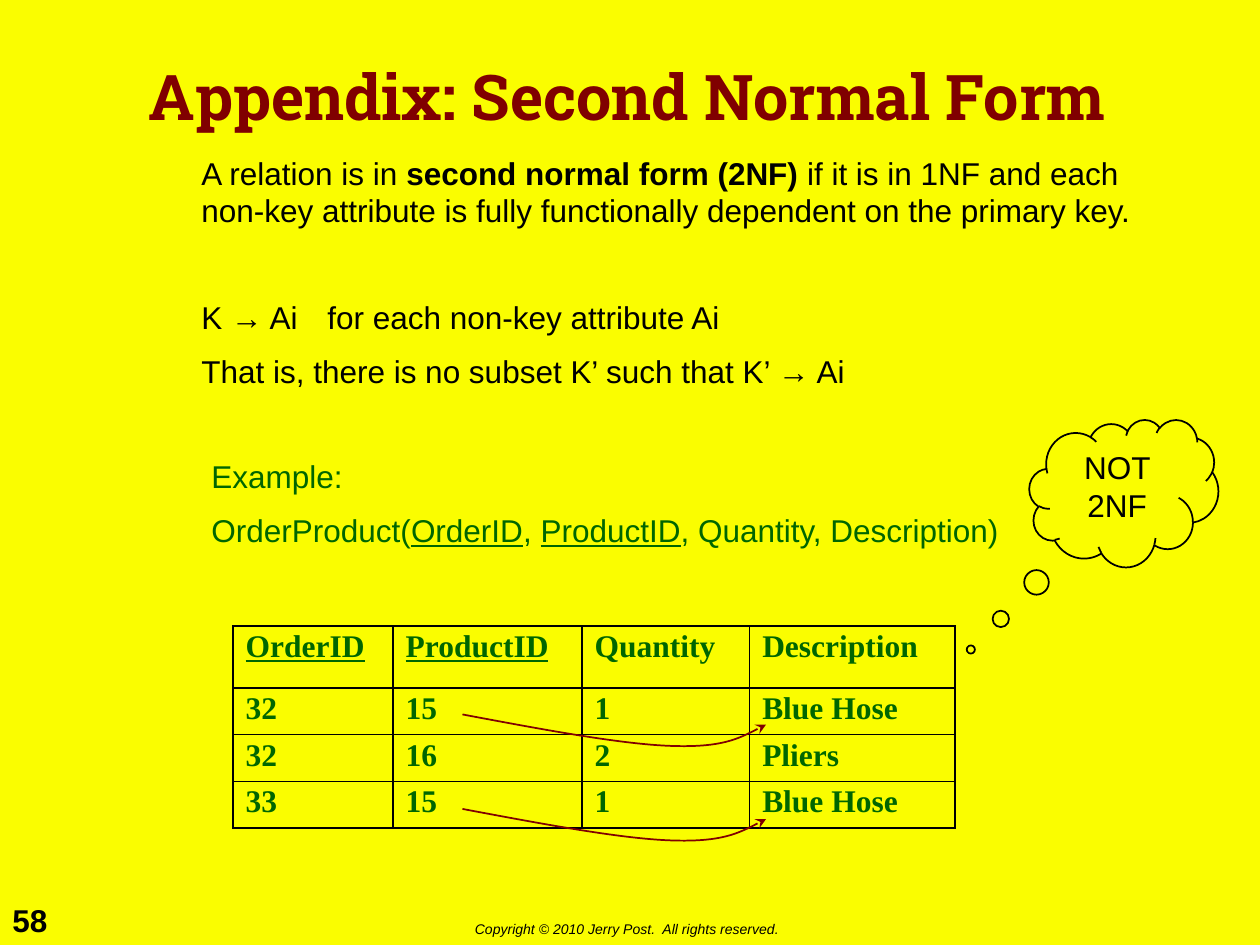
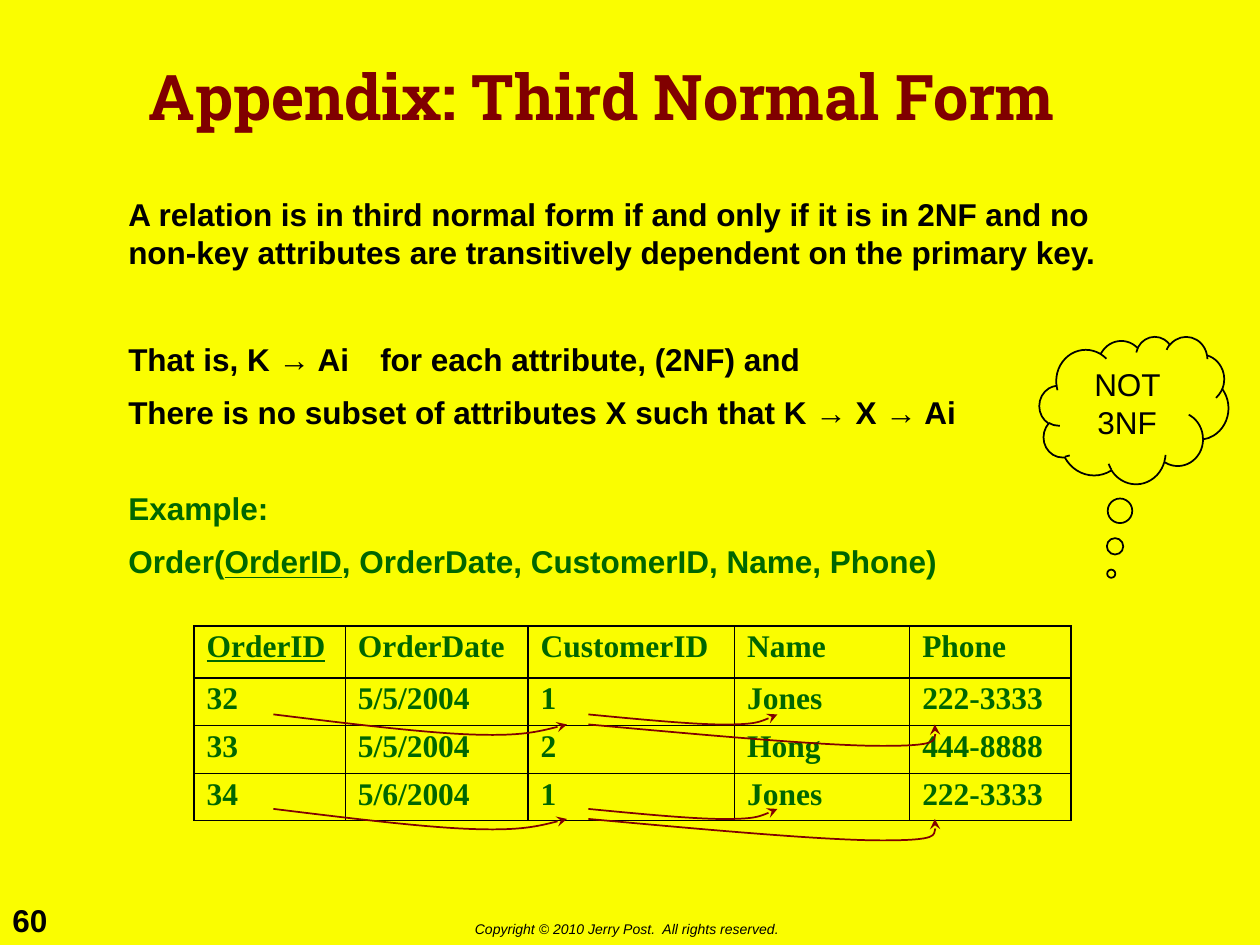
import dataclasses

import pptx
import pptx.dml.color
import pptx.enum.shapes
import pptx.enum.text
import pptx.oxml
import pptx.oxml.ns
import pptx.util

Inches = pptx.util.Inches
Pt = pptx.util.Pt


@dataclasses.dataclass(frozen=True)
class Theme:
    background: str = "FAFD00"
    ink: str = "000000"
    maroon: str = "800000"
    green: str = "006600"
    title_font: str = "Roboto Slab"
    body_font: str = "Arial"
    table_font: str = "Times New Roman"
    title_size: int = 36
    body_size: int = 18
    footer_size: int = 8
    paragraph_gap: float = 9
    section_gap: float = 39.5
    line_width: float = 1


THEME = Theme()
COPYRIGHT = "Copyright © 2010 Jerry Post.  All rights reserved."
ROW_PAIR_STEP = 0.75

SLIDES = [
    {
        "number": "58",
        "title": "Appendix: Second Normal Form",
        "bold": False,
        "definition_at": (1.5, 1.17, 7.92, 2.06),
        "definition": [
            [("A relation is in ", ""), ("second normal form (2NF)", "bold"),
             (" if it is in 1NF and each non-key attribute is fully functionally "
              "dependent on the primary key.", "")],
            [("K → Ai\tfor each non-key attribute Ai", "")],
            [("That is, there is no subset K’ such that K’ → Ai", "")],
        ],
        "example_at": (1.58, 3.58, 7.92, 0.85),
        "example": [
            [("Example:", "")],
            [("OrderProduct(", ""), ("OrderID", "underline"), (", ", ""),
             ("ProductID", "underline"), (", Quantity, Description)", "")],
        ],
        "table_at": (1.85, 4.97),
        "columns": [1.27, 1.5, 1.33, 1.63],
        "rows": [0.49, 0.37, 0.37, 0.37],
        "keys": ["OrderID", "ProductID"],
        "table": [
            ["OrderID", "ProductID", "Quantity", "Description"],
            ["32", "15", "1", "Blue Hose"],
            ["32", "16", "2", "Pliers"],
            ["33", "15", "1", "Blue Hose"],
        ],
        "dependencies": [[(3.67, 5.67), (5.33, 5.92), (6.08, 5.75)]],
        "callout": "NOT 2NF",
        "callout_at": (8.17, 3.33, 1.5, 1.17),
        "callout_tip": (-0.81, 1.06),
    },
    {
        "number": "60",
        "title": "Appendix: Third Normal Form",
        "bold": True,
        "definition_at": (0.92, 1.5, 8, 2.06),
        "definition": [
            [("A relation is in third normal form if and only if it is in 2NF and no "
              "non-key attributes are transitively dependent on the primary key.", "")],
            [("That is, K → Ai\tfor each attribute, (2NF) and", "")],
            [("There is no subset of attributes X such that K → X → Ai", "")],
        ],
        "example_at": (0.92, 3.83, 8.08, 0.85),
        "example": [
            [("Example:", "")],
            [("Order(", ""), ("OrderID", "underline"),
             (", OrderDate, CustomerID, Name, Phone)", "")],
        ],
        "table_at": (1.54, 4.97),
        "columns": [1.2, 1.45, 1.64, 1.39, 1.28],
        "rows": [0.41, 0.38, 0.38, 0.37],
        "keys": ["OrderID"],
        "table": [
            ["OrderID", "OrderDate", "CustomerID", "Name", "Phone"],
            ["32", "5/5/2004", "1", "Jones", "222-3333"],
            ["33", "5/5/2004", "2", "Hong", "444-8888"],
            ["34", "5/6/2004", "1", "Jones", "222-3333"],
        ],
        "dependencies": [
            [(2.17, 5.67), (3.75, 5.83), (4.5, 5.75)],
            [(4.67, 5.67), (5.75, 5.75), (6.17, 5.67)],
            [(4.67, 5.75), (7, 5.92), (7.42, 5.75)],
        ],
        "callout": "NOT 3NF",
        "callout_at": (8.25, 2.67, 1.5, 1.17),
        "callout_tip": (-0.12, 1.11),
    },
]


def color(value):
    return pptx.dml.color.RGBColor.from_string(value)


def set_font(para, name, size, fill, bold=False, italic=False):
    para.font.name = name
    para.font.size = Pt(size)
    para.font.color.rgb = color(fill)
    para.font.bold = bold
    para.font.italic = italic


def set_line(shape, value):
    shape.shadow.inherit = False
    shape.fill.background()
    shape.line.color.rgb = color(value)
    shape.line.width = Pt(THEME.line_width)


def add_text(page, place, paragraphs, fill, size=THEME.body_size, bold=False,
             italic=False, wrap=True, gaps=()):
    box = page.shapes.add_textbox(*map(Inches, place))
    box.text_frame.word_wrap = wrap
    box.text_frame.auto_size = pptx.enum.text.MSO_AUTO_SIZE.SHAPE_TO_FIT_TEXT
    for index, runs in enumerate(paragraphs):
        para = box.text_frame.add_paragraph() if index else box.text_frame.paragraphs[0]
        if index:
            para.space_before = Pt(gaps[index - 1])
        set_font(para, THEME.body_font, size, fill, bold, italic)
        for text, style in runs:
            span = para.add_run()
            span.text = text
            if style == "bold":
                span.font.bold = True
            elif style == "underline":
                span.font.underline = True


def add_title(page, text):
    title = page.shapes.title
    title.left, title.top, title.width, title.height = map(Inches, (1.08, 0.17, 7.83, 1.25))
    frame = title.text_frame
    frame.text = text
    frame.auto_size = pptx.enum.text.MSO_AUTO_SIZE.NONE
    frame.vertical_anchor = pptx.enum.text.MSO_ANCHOR.MIDDLE
    para = frame.paragraphs[0]
    para.alignment = pptx.enum.text.PP_ALIGN.LEFT
    para.line_spacing = 0.9
    set_font(para, THEME.title_font, THEME.title_size, THEME.maroon, bold=True)


def add_footer(page, number):
    add_text(page, (0, 7.1, 0.5, 0.4), [[(number, "")]], THEME.ink, bold=True, wrap=False)
    add_text(page, (3.67, 7.26, 2.65, 0.24), [[(COPYRIGHT, "")]], THEME.ink,
             size=THEME.footer_size, italic=True, wrap=False)


def set_borders(cell):
    properties = cell._tc.get_or_add_tcPr()
    for index, side in enumerate(("lnL", "lnR", "lnT", "lnB")):
        properties.insert(index, pptx.oxml.parse_xml(
            f'<a:{side} {pptx.oxml.ns.nsdecls("a")} w="{Pt(THEME.line_width)}">'
            f'<a:solidFill><a:srgbClr val="{THEME.ink}"/></a:solidFill></a:{side}>'))


def add_relation_table(page, content):
    columns, rows = content["columns"], content["rows"]
    place = (*content["table_at"], sum(columns), sum(rows))
    table = page.shapes.add_table(len(rows), len(columns), *map(Inches, place)).table
    table.first_row = False
    table.horz_banding = False
    for column, width in zip(table.columns, columns):
        column.width = Inches(width)
    for row, height, values in zip(table.rows, rows, content["table"]):
        row.height = Inches(height)
        for cell, value in zip(row.cells, values):
            cell.text = value
            cell.fill.background()
            set_borders(cell)
            para = cell.text_frame.paragraphs[0]
            para.line_spacing = 0.9
            set_font(para, THEME.table_font, THEME.body_size, THEME.green, bold=True)
            para.font.underline = value in content["keys"]


def smooth_controls(start, bend, end):
    def mix(first, second):
        return tuple((a + b) / 2 for a, b in zip(first, second))

    tangent = [(b - a) / 6 for a, b in zip(start, end)]
    before = tuple(b - d for b, d in zip(bend, tangent))
    after = tuple(b + d for b, d in zip(bend, tangent))
    return [mix(start, before), before, bend, after, mix(after, end), end]


def lines_to_curves(shape):
    qn = pptx.oxml.ns.qn
    segments = list(shape._element.iter(qn("a:lnTo")))
    for first in range(0, len(segments), 3):
        curve = pptx.oxml.parse_xml(f'<a:cubicBezTo {pptx.oxml.ns.nsdecls("a")}/>')
        segments[first].addprevious(curve)
        for segment in segments[first:first + 3]:
            curve.append(segment.find(qn("a:pt")))
            segment.getparent().remove(segment)


def add_dependency(page, points, shift):
    start, bend, end = [(x, y + shift) for x, y in points]
    builder = page.shapes.build_freeform(*map(Inches, start))
    builder.add_line_segments(
        [(Inches(x), Inches(y)) for x, y in smooth_controls(start, bend, end)], close=False)
    arrow = builder.convert_to_shape()
    lines_to_curves(arrow)
    set_line(arrow, THEME.maroon)
    arrow.line._get_or_add_ln().append(pptx.oxml.parse_xml(
        f'<a:tailEnd {pptx.oxml.ns.nsdecls("a")} type="stealth"/>'))


def add_callout(page, content):
    cloud = page.shapes.add_shape(pptx.enum.shapes.MSO_SHAPE.CLOUD_CALLOUT,
                                  *map(Inches, content["callout_at"]))
    cloud.adjustments[0], cloud.adjustments[1] = content["callout_tip"]
    set_line(cloud, THEME.ink)
    cloud.text_frame.text = content["callout"]
    cloud.text_frame.word_wrap = True
    cloud.text_frame.vertical_anchor = pptx.enum.text.MSO_ANCHOR.TOP
    para = cloud.text_frame.paragraphs[0]
    para.alignment = pptx.enum.text.PP_ALIGN.CENTER
    set_font(para, THEME.body_font, THEME.body_size, THEME.ink)


def build_slide(deck, content):
    page = deck.slides.add_slide(deck.slide_layouts.get_by_name("Title Only"))
    add_footer(page, content["number"])
    add_title(page, content["title"])
    add_text(page, content["definition_at"], content["definition"], THEME.ink,
             bold=content["bold"], gaps=(THEME.section_gap, THEME.paragraph_gap))
    add_text(page, content["example_at"], content["example"], THEME.green,
             bold=content["bold"], gaps=(THEME.paragraph_gap,))
    add_relation_table(page, content)
    for shift in (0, ROW_PAIR_STEP):
        for points in content["dependencies"]:
            add_dependency(page, points, shift)
    add_callout(page, content)


def main():
    deck = pptx.Presentation()
    deck.slide_width, deck.slide_height = Inches(10), Inches(7.5)
    fill = deck.slide_master.background.fill
    fill.solid()
    fill.fore_color.rgb = color(THEME.background)
    for content in SLIDES:
        build_slide(deck, content)
    deck.save("out.pptx")


if __name__ == "__main__":
    main()
